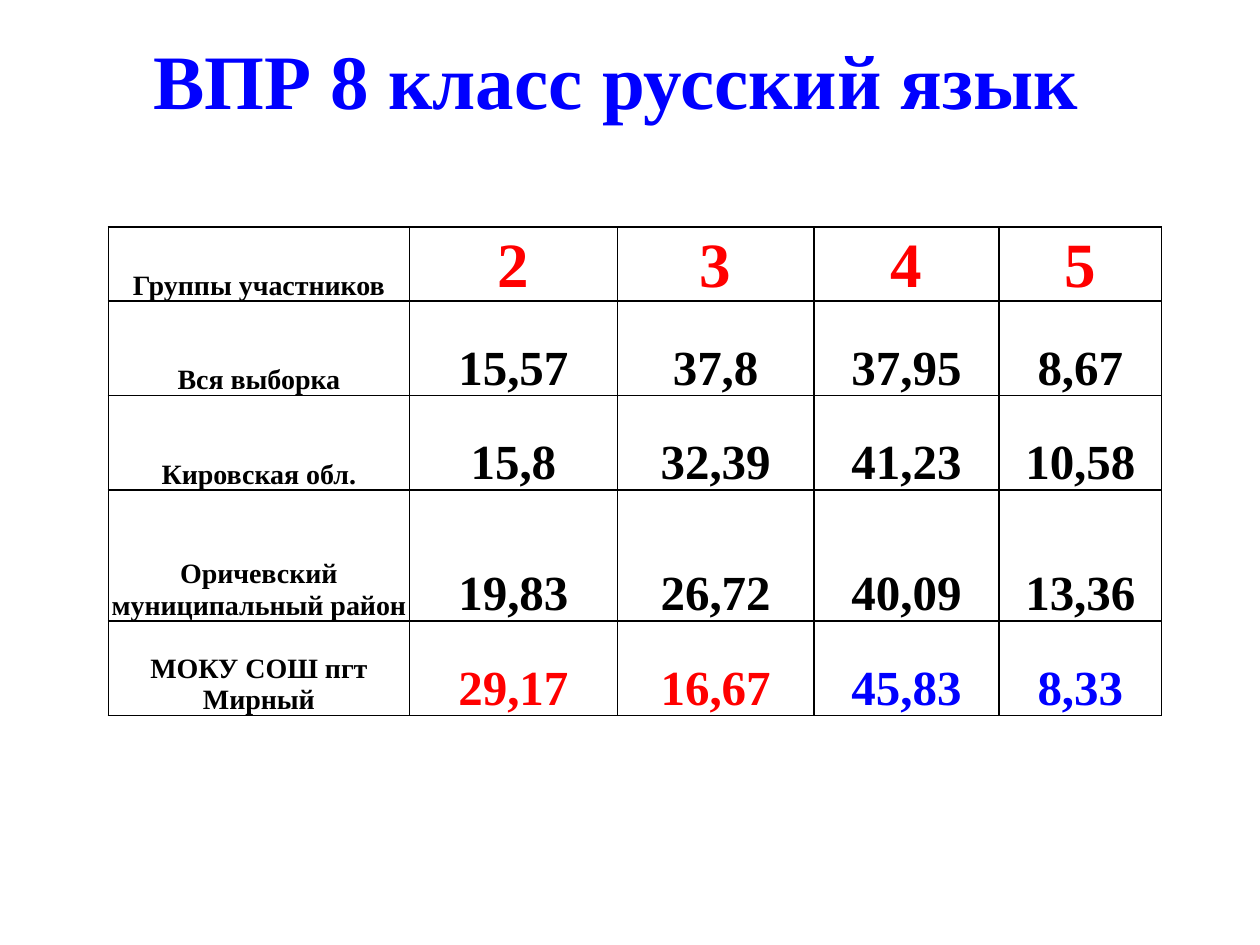
from lxml import etree
from pptx import Presentation
from pptx.dml.color import RGBColor
from pptx.enum.text import MSO_ANCHOR, PP_ALIGN
from pptx.oxml.ns import qn
from pptx.util import Inches, Pt

FONT = "Times New Roman"
BLACK = RGBColor(0x00, 0x00, 0x00)
RED = RGBColor(0xFF, 0x00, 0x00)
BLUE = RGBColor(0x00, 0x00, 0xFF)
CENTER = PP_ALIGN.CENTER
MIDDLE, BOTTOM = MSO_ANCHOR.MIDDLE, MSO_ANCHOR.BOTTOM
TITLE_ONLY = 5

COLUMN_WIDTHS = [2.39, 1.65, 1.56, 1.47, 1.29]
ROW_HEIGHTS = [0.59, 0.75, 0.75, 1.04, 0.75]
RESULTS = [
    ["Группы участников", "2", "3", "4", "5"],
    ["Вся выборка", "15,57", "37,8", "37,95", "8,67"],
    ["Кировская обл.", "15,8", "32,39", "41,23", "10,58"],
    ["Оричевский муниципальный район", "19,83", "26,72", "40,09", "13,36"],
    ["МОКУ СОШ пгт Мирный", "29,17", "16,67", "45,83", "8,33"],
]
SCHOOL_COLORS = [BLACK, RED, RED, BLUE, BLUE]


def write_text(frame, text, *, size, color=BLACK, bold=True, align=CENTER):
    paragraph = frame.paragraphs[0]
    paragraph.alignment = align
    run = paragraph.add_run()
    run.text = text
    run.font.name = FONT
    run.font.size = Pt(size)
    run.font.bold = bold
    run.font.color.rgb = color


def add_borders(cell, color=BLACK, width=1):
    properties = cell._tc.get_or_add_tcPr()
    for side in ("a:lnL", "a:lnR", "a:lnT", "a:lnB"):
        line = etree.SubElement(properties, qn(side), w=str(Pt(width)))
        fill = etree.SubElement(line, qn("a:solidFill"))
        etree.SubElement(fill, qn("a:srgbClr"), val=str(color))


def cell_format(row, column):
    """Return the text size and colour for a place in the results table."""
    if column == 0:
        return 16, BLACK
    if row == 0:
        return 36, RED
    is_school = row == len(RESULTS) - 1
    return 28, SCHOOL_COLORS[column] if is_school else BLACK


def place_title(slide, left, top, width, height):
    title = slide.shapes.title
    title.left, title.top = Inches(left), Inches(top)
    title.width, title.height = Inches(width), Inches(height)
    title.text_frame.vertical_anchor = MIDDLE
    write_text(title.text_frame, "ВПР 8 класс русский язык", size=44, color=BLUE)


def place_results(slide, left, top, width, height):
    results = slide.shapes.add_table(
        len(RESULTS), len(COLUMN_WIDTHS),
        Inches(left), Inches(top), Inches(width), Inches(height),
    ).table
    results.first_row = results.horz_banding = False

    # Column and row shares of the box
    for column, share in zip(results.columns, COLUMN_WIDTHS):
        column.width = Inches(width * share / sum(COLUMN_WIDTHS))
    for row, share in zip(results.rows, ROW_HEIGHTS):
        row.height = Inches(height * share / sum(ROW_HEIGHTS))

    # Marks in the top row, participant groups in the first column
    for r, values in enumerate(RESULTS):
        for c, value in enumerate(values):
            cell = results.cell(r, c)
            add_borders(cell)
            cell.fill.background()
            cell.vertical_anchor = BOTTOM
            cell.margin_left = cell.margin_right = cell.margin_top = Inches(0.01)
            cell.margin_bottom = 0
            size, color = cell_format(r, c)
            write_text(cell.text_frame, value, size=size, color=color)


def main():
    presentation = Presentation()
    presentation.slide_width = Inches(10)
    presentation.slide_height = Inches(7.5)
    slide = presentation.slides.add_slide(presentation.slide_layouts[TITLE_ONLY])
    place_title(slide, 0.39, 0, 9, 1.25)
    place_results(slide, 0.86, 1.8, 8.36, 3.88)
    presentation.save("out.pptx")


if __name__ == "__main__":
    main()
